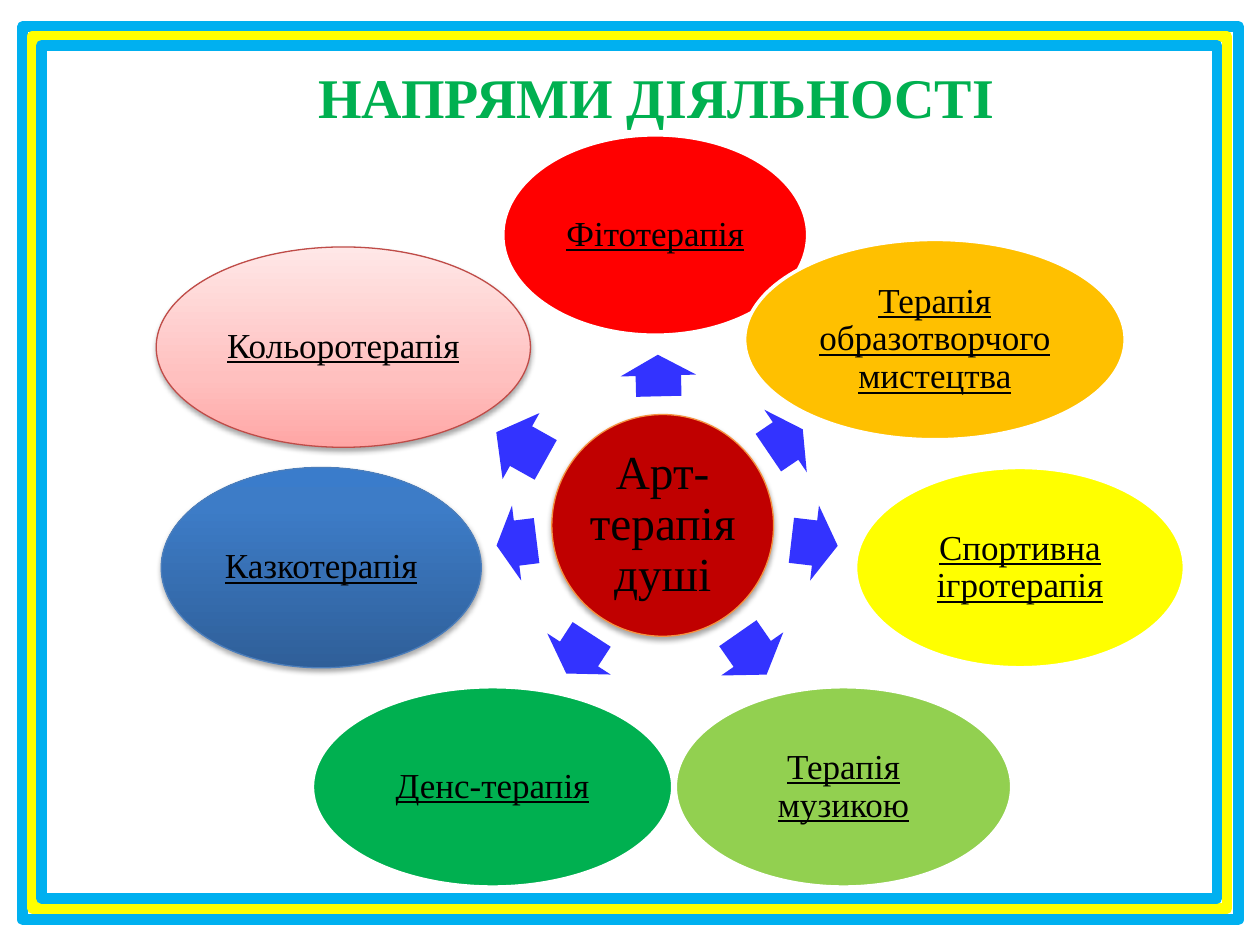
import copy

import pptx
import pptx.dml.color
import pptx.enum.shapes
import pptx.enum.text
import pptx.oxml
import pptx.oxml.ns
import pptx.util

PX = 9144  # 100 px to the inch
FONT = "Times New Roman"
SHAPE = pptx.enum.shapes.MSO_SHAPE
COLORS = {
    "sky": "00B0F0", "yellow": "FFFF00", "white": "FFFFFF", "black": "000000",
    "arrow": "3333FF", "hub": "C00000", "hub_line": "F69240", "red": "FF0000",
    "orange": "FFC000", "lime": "92D050", "green": "00B050",
    "blue_line": "4B7EBC", "rose_line": "BF4C48",
    "blue_low": "2F5F99", "blue_mid": "3D7CC7", "blue_top": "3A7CCB",
    "rose_low": "FFA6A5", "rose_mid": "FFC0BF", "rose_top": "FFE7E7",
}
TITLE = ("НАПРЯМИ ДІЯЛЬНОСТІ", (240, 44, 562, 64))
HUB = ("Арт-терапія душі", (438, 329, 176, 176))
FRAMES = [
    ((18, 21, 965, 709), "sky"),
    ((26, 29, 948, 692), "yellow"),
    ((33, 36, 933, 677), "sky"),
]
BLUE = [(0, "blue_low"), (0.8, "blue_mid"), (1, "blue_top")]
ROSE = [(0, "rose_low"), (0.35, "rose_mid"), (1, "rose_top")]
PETAL_HEIGHT, ARROW_HEIGHT = 159, 60
# text, (left, top, width), fill, raised line, arrow (left, top, width), arrow angle
PETALS = [
    ("Фітотерапія", (399, 107, 242), "red", None, (506, 268, 33), 268.6),
    ("Терапія образотворчого мистецтва", (591, 190, 302), "orange", None, (607, 320, 33), 325.8),
    ("Спортивна ігротерапія", (679, 371, 261), "yellow", None, (628, 401, 37), 6.7),
    ("Терапія музикою", (536, 545, 267), "lime", None, (577, 489, 40), 55.2),
    ("Денс-терапія", (248, 545, 286), "green", None, (441, 489, 37), 123),
    ("Казкотерапія", (128, 371, 254), BLUE, "blue_line", (394, 401, 32), 173),
    ("Кольоротерапія", (124, 196, 297), ROSE, "rose_line", (391, 324, 45), 209.2),
]


def rgb(name):
    return pptx.dml.color.RGBColor.from_string(COLORS[name])


def fill_gradient(fill, stops):
    """Fill from bottom to top with (position, colour) stops."""
    fill.gradient()
    fill.gradient_angle = 90
    last = fill.gradient_stops[-1]._gs
    for _ in stops[2:]:
        last.addnext(copy.deepcopy(last))
    for stop, (position, name) in zip(fill.gradient_stops, stops):
        stop.position = position
        stop.color.rgb = rgb(name)


def add_shadow(shape):
    """Put a soft shadow straight below the shape."""
    effects = shape._element.spPr.find(pptx.oxml.ns.qn("a:effectLst"))
    effects.append(pptx.oxml.parse_xml(
        f'<a:outerShdw {pptx.oxml.ns.nsdecls("a")} blurRad="39370" dist="22860" '
        'dir="5400000" rotWithShape="0"><a:srgbClr val="000000">'
        '<a:alpha val="35000"/></a:srgbClr></a:outerShdw>'))


def add_shape(page, kind, place, fill=None, line=None, width=0.75):
    shape = page.shapes.add_shape(kind, *(n * PX for n in place))
    shape.shadow.inherit = False
    if fill is None:
        shape.fill.background()
    elif isinstance(fill, list):
        fill_gradient(shape.fill, fill)
    else:
        shape.fill.solid()
        shape.fill.fore_color.rgb = rgb(fill)
    if line is None:
        shape.line.fill.background()
    else:
        shape.line.color.rgb = rgb(line)
        shape.line.width = pptx.util.Pt(width)
    return shape


def write(shape, text, size, color="black", bold=False, underline=False,
          spacing=0.9, inset=None, wrap=True):
    frame = shape.text_frame
    frame.word_wrap = wrap
    frame.vertical_anchor = pptx.enum.text.MSO_ANCHOR.MIDDLE
    if inset is not None:
        frame.margin_left = frame.margin_right = inset * PX
        frame.margin_top = frame.margin_bottom = inset * PX
    para = frame.paragraphs[0]
    para.alignment = pptx.enum.text.PP_ALIGN.CENTER
    para.line_spacing = spacing
    span = para.add_run()
    span.text = text
    span.font.name = FONT
    span.font.size = pptx.util.Pt(size)
    span.font.bold = bold
    span.font.underline = underline
    span.font.color.rgb = rgb(color)


def add_frames(page):
    for place, color in FRAMES:
        frame = add_shape(page, SHAPE.RECTANGLE, place, line=color, width=6)
        frame.line._get_or_add_ln().append(
            pptx.oxml.parse_xml(f'<a:round {pptx.oxml.ns.nsdecls("a")}/>'))


def add_hub(page):
    text, place = HUB
    hub = add_shape(page, SHAPE.OVAL, place, "hub", "hub_line")
    add_shadow(hub)
    write(hub, text, 27, inset=4)


def add_petals(page):
    for text, place, fill, raised_line, arrow_place, angle in PETALS:
        arrow = add_shape(page, SHAPE.RIGHT_ARROW, (*arrow_place, ARROW_HEIGHT), "arrow")
        arrow.adjustments[0] = 0.6
        arrow.adjustments[1] = 0.5
        arrow.rotation = angle
        petal = add_shape(page, SHAPE.OVAL, (*place, PETAL_HEIGHT), fill,
                          raised_line or "white", 0.75 if raised_line else 2)
        if raised_line:
            add_shadow(petal)
        write(petal, text, 20, underline=True, inset=3)


def add_title(page):
    text, place = TITLE
    title = page.shapes.title
    title.left, title.top, title.width, title.height = (n * PX for n in place)
    write(title, text, 32, color="green", bold=True, spacing=1.0, wrap=False)


def main():
    deck = pptx.Presentation()
    deck.slide_width, deck.slide_height = 1000 * PX, 750 * PX
    page = deck.slides.add_slide(deck.slide_layouts[5])
    add_frames(page)
    add_hub(page)
    add_petals(page)
    add_title(page)
    deck.save("out.pptx")


if __name__ == "__main__":
    main()
